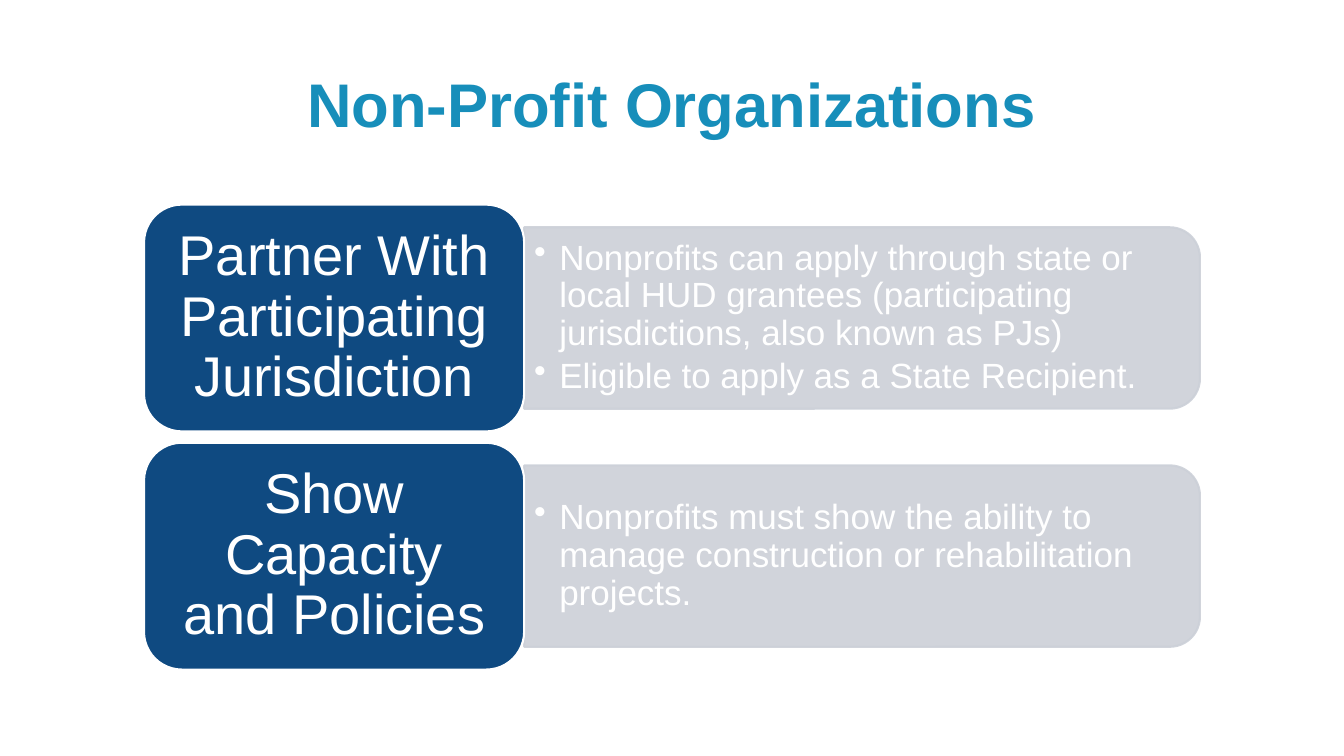
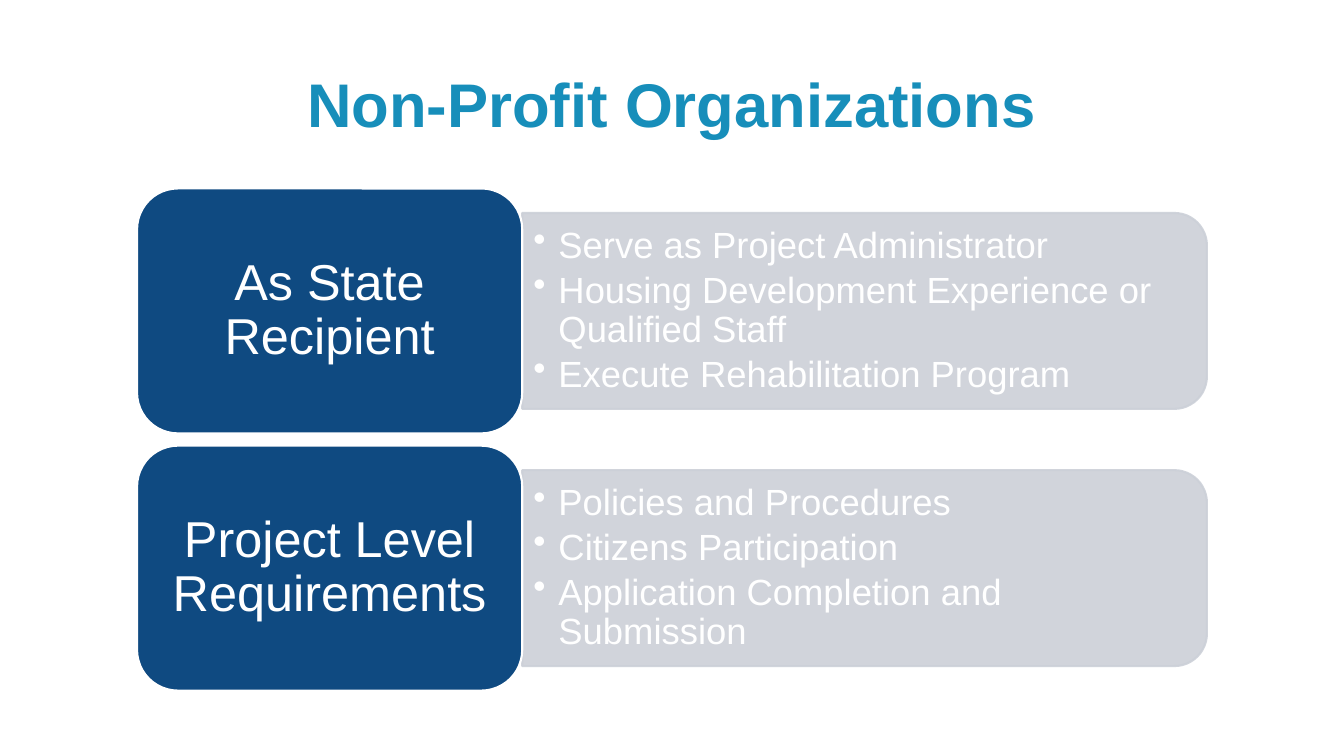
from lxml import etree
from pptx import Presentation
from pptx.dml.color import RGBColor
from pptx.enum.shapes import MSO_SHAPE
from pptx.enum.text import MSO_ANCHOR, PP_ALIGN
from pptx.oxml.ns import qn
from pptx.util import Inches, Pt

COLORS = {"title": "178EBA", "label": "0F4A81", "panel": "CCD0D8", "white": "FFFFFF"}
FONT = "Arial"
TITLE = "Non-Profit Organizations"
SLIDE_WIDTH, SLIDE_HEIGHT = 13.33, 7.5
LINE_SPACING = 0.9
ROW_PITCH = 1.05
PANEL_HEIGHT_RATIO = 0.8
PANEL_WIDTH_RATIO = 16 / 9
CORNER_MARGIN = 0.0488
PANEL_OPACITY = 90

SLIDES = [
    {
        "top": 2.03, "label_size": (3.77, 2.25),
        "label_font": 40, "label_inset": (0.17, 0.08),
        "bullet_font": 25, "bullet_inset": (0.1, 0.05),
        "rows": [
            ("Partner With Participating Jurisdiction", [
                "Nonprofits can apply through state or local HUD grantees "
                "(participating jurisdictions, also known as PJs)",
                "Eligible to apply as a State Recipient.",
            ]),
            ("Show Capacity and Policies", [
                "Nonprofits must show the ability to manage construction "
                "or rehabilitation projects.",
            ]),
        ],
    },
    {
        "top": 1.87, "label_size": (3.82, 2.43),
        "label_font": 36, "label_inset": (0.15, 0.07),
        "bullet_font": 26, "bullet_inset": (0.11, 0.05),
        "rows": [
            ("As State Recipient", [
                "Serve as Project Administrator",
                "Housing Development Experience or Qualified Staff",
                "Execute Rehabilitation Program",
            ]),
            ("Project Level Requirements", [
                "Policies and Procedures",
                "Citizens Participation",
                "Application Completion and Submission",
            ]),
        ],
    },
]


def rgb(name):
    return RGBColor.from_string(COLORS[name])


def write(shape, lines, size, color, inset, anchor=MSO_ANCHOR.MIDDLE,
          bold=False, bullets=False, space_after=0):
    frame = shape.text_frame
    frame.word_wrap = True
    frame.vertical_anchor = anchor
    frame.margin_left = frame.margin_right = Inches(inset[0])
    frame.margin_top = frame.margin_bottom = Inches(inset[1])
    for index, line in enumerate(lines):
        paragraph = frame.paragraphs[0] if index == 0 else frame.add_paragraph()
        paragraph.text = line
        paragraph.alignment = PP_ALIGN.LEFT if bullets else PP_ALIGN.CENTER
        paragraph.line_spacing = LINE_SPACING
        paragraph.space_after = Pt(size * space_after)
        if bullets:
            properties = paragraph._p.get_or_add_pPr()
            properties.set("marL", str(Inches(0.25)))
            properties.set("indent", str(-Inches(0.25)))
            etree.SubElement(properties, qn("a:buChar")).set("char", "•")
        font = paragraph.font
        font.name, font.size, font.bold = FONT, Pt(size), bold
        font.color.rgb = rgb(color)


def add_box(slide, kind, left, top, width, height, fill, line):
    shape = slide.shapes.add_shape(
        kind, Inches(left), Inches(top), Inches(width), Inches(height))
    shape.shadow.inherit = False
    shape.fill.solid()
    shape.fill.fore_color.rgb = rgb(fill)
    shape.line.color.rgb = rgb(line)
    shape.line.width = Pt(1.5)
    return shape


def add_text_box(slide, left, top, width, height):
    return slide.shapes.add_textbox(
        Inches(left), Inches(top), Inches(width), Inches(height))


def add_title(slide):
    title = add_text_box(slide, 0.75, 0.64, 11.83, 0.99)
    write(title, [TITLE], 44, "title", (0.1, 0.1), MSO_ANCHOR.TOP, bold=True)


def add_panel(slide, left, middle, width, height):
    panel = add_box(slide, MSO_SHAPE.ROUND_2_SAME_RECTANGLE,
                    left + (width - height) / 2, middle - width / 2,
                    height, width, "panel", "panel")
    panel.rotation = 90
    for color in panel._element.spPr.iter(qn("a:srgbClr")):
        etree.SubElement(color, qn("a:alpha")).set("val", str(PANEL_OPACITY * 1000))


def add_row(slide, content, top, label_text, bullets):
    label_width, label_height = content["label_size"]
    panel_width = label_width * PANEL_WIDTH_RATIO
    panel_height = label_height * PANEL_HEIGHT_RATIO
    left = (SLIDE_WIDTH - label_width - panel_width) / 2
    panel_left = left + label_width
    middle = top + label_height / 2
    margin = panel_height * CORNER_MARGIN

    add_panel(slide, panel_left, middle, panel_width, panel_height)
    details = add_text_box(slide, panel_left, middle - panel_height / 2 + margin,
                           panel_width - margin, panel_height - 2 * margin)
    write(details, bullets, content["bullet_font"], "white",
          content["bullet_inset"], bullets=True, space_after=0.15)
    label = add_box(slide, MSO_SHAPE.ROUNDED_RECTANGLE, left, top,
                    label_width, label_height, "label", "white")
    write(label, [label_text], content["label_font"], "white", content["label_inset"])


def main():
    presentation = Presentation()
    presentation.slide_width = Inches(SLIDE_WIDTH)
    presentation.slide_height = Inches(SLIDE_HEIGHT)
    for content in SLIDES:
        slide = presentation.slides.add_slide(presentation.slide_layouts[6])
        add_title(slide)
        step = content["label_size"][1] * ROW_PITCH
        for index, (label_text, bullets) in enumerate(content["rows"]):
            add_row(slide, content, content["top"] + index * step, label_text, bullets)
    presentation.save("out.pptx")


if __name__ == "__main__":
    main()
